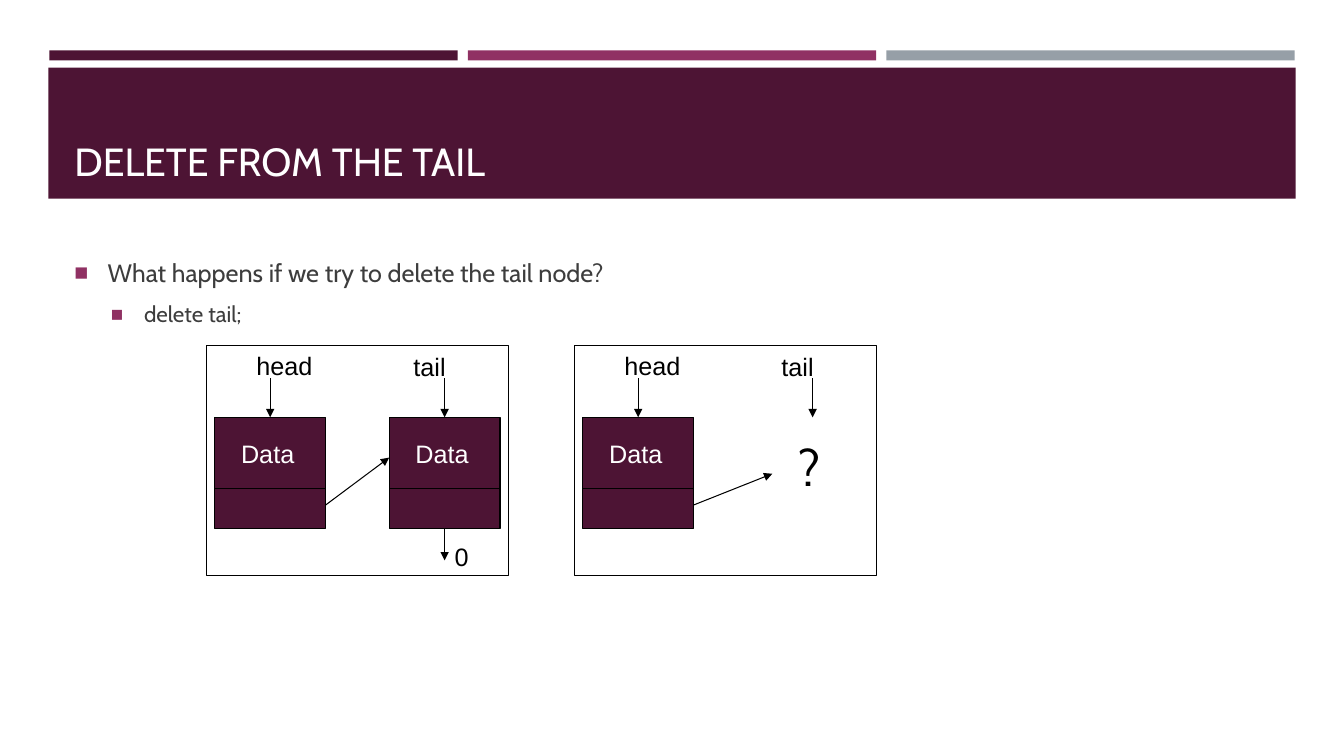
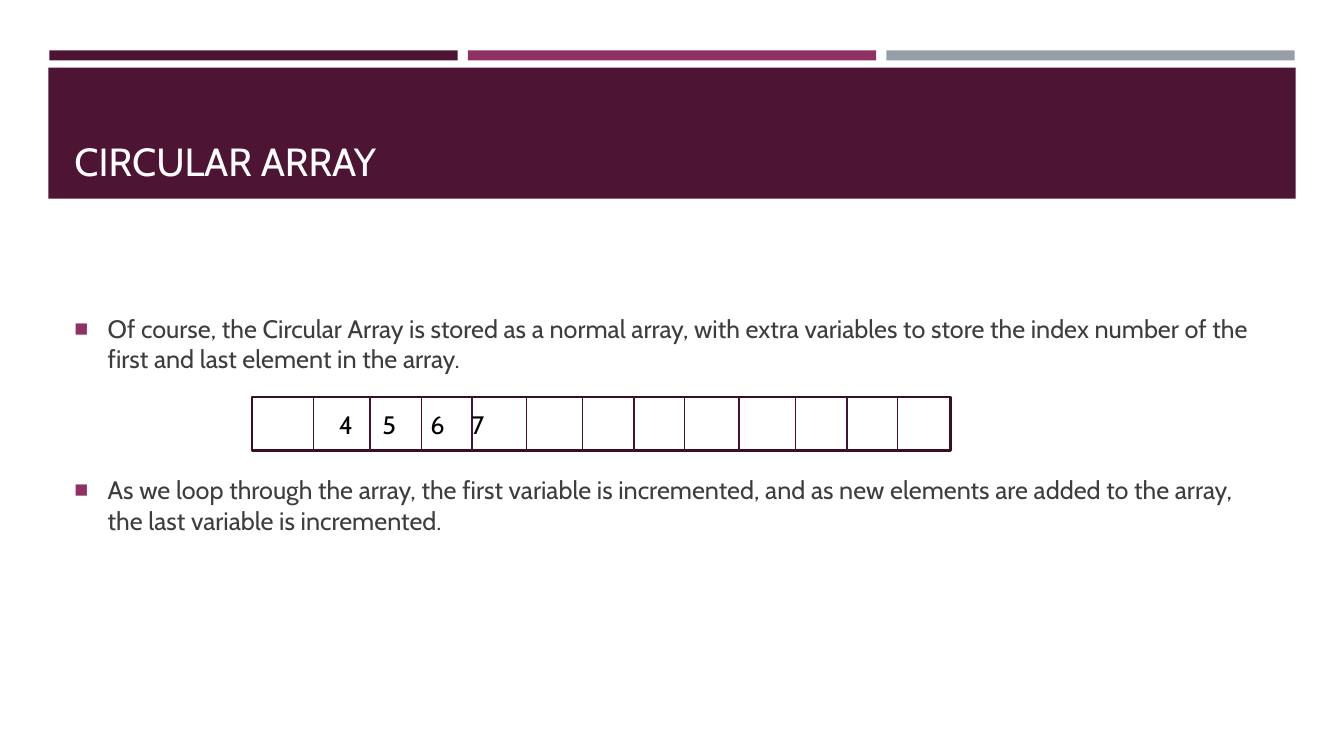
from dataclasses import dataclass
from itertools import product
from typing import Optional

from lxml.etree import SubElement
from pptx import Presentation
from pptx.dml.color import RGBColor
from pptx.enum.shapes import MSO_CONNECTOR, MSO_SHAPE
from pptx.enum.text import MSO_ANCHOR, PP_ALIGN
from pptx.oxml.ns import qn
from pptx.shapes.autoshape import Shape
from pptx.shapes.connector import Connector
from pptx.slide import Slide
from pptx.text.text import _Paragraph as Paragraph
from pptx.util import Inches, Pt


@dataclass(frozen=True)
class Theme:
    plum: str = "4D1434"
    magenta: str = "903163"
    gray: str = "969FA7"
    white: str = "FFFFFF"
    black: str = "000000"
    body: str = "3D3D3D"
    array_edge: str = "390F26"
    array_divider: str = "45122F"
    main_font: str = "Cabin"
    label_font: str = "Arial"
    title_size: float = 28
    text_size: float = 18
    detail_size: float = 16
    question_size: float = 36
    thin: float = 0.75


THEME = Theme()


@dataclass(frozen=True)
class Area:
    left: float
    top: float
    width: float
    height: float


@dataclass(frozen=True)
class Bullet:
    text: str
    level: int = 0
    gap_after: float = 9.6


@dataclass(frozen=True)
class Label:
    text: str
    area: Area
    color: str = THEME.black
    font: str = THEME.label_font
    size: float = THEME.text_size


@dataclass(frozen=True)
class Outline:
    color: str
    width: float


BLACK_LINE = Outline(THEME.black, THEME.thin)
NODE_SIZE = 1.1
NODE_TOP = 4.14


def add_box(page: Slide, area: Area, fill: Optional[str] = None,
            outline: Optional[Outline] = None) -> Shape:
    box = page.shapes.add_shape(
        MSO_SHAPE.RECTANGLE, Inches(area.left), Inches(area.top),
        Inches(area.width), Inches(area.height))
    box.shadow.inherit = False
    if fill:
        box.fill.solid()
        box.fill.fore_color.rgb = RGBColor.from_string(fill)
    else:
        box.fill.background()
    if outline:
        box.line.color.rgb = RGBColor.from_string(outline.color)
        box.line.width = Pt(outline.width)
    else:
        box.line.fill.background()
    return box


def add_line(page: Slide, start: tuple[float, float], end: tuple[float, float],
             outline: Outline = BLACK_LINE, arrow: bool = False) -> Connector:
    line = page.shapes.add_connector(
        MSO_CONNECTOR.STRAIGHT, Inches(start[0]), Inches(start[1]),
        Inches(end[0]), Inches(end[1]))
    line.line.color.rgb = RGBColor.from_string(outline.color)
    line.line.width = Pt(outline.width)
    properties = line.element.spPr
    if arrow:
        SubElement(properties.find(qn("a:ln")), qn("a:tailEnd"), type="triangle")
    SubElement(properties, qn("a:effectLst"))
    return line


def add_text_box(page: Slide, area: Area, wrap: bool = True,
                 anchor: MSO_ANCHOR = MSO_ANCHOR.TOP) -> Shape:
    box = page.shapes.add_textbox(
        Inches(area.left), Inches(area.top), Inches(area.width), Inches(area.height))
    box.text_frame.word_wrap = wrap
    box.text_frame.vertical_anchor = anchor
    return box


def add_span(para: Paragraph, text: str, size: float, color: str,
             font: str = THEME.main_font) -> None:
    span = para.add_run()
    span.text = text
    span.font.size = Pt(size)
    span.font.name = font
    span.font.color.rgb = RGBColor.from_string(color)


def add_label(page: Slide, label: Label) -> None:
    box = add_text_box(page, label.area, wrap=False)
    para = box.text_frame.paragraphs[0]
    para.alignment = PP_ALIGN.CENTER
    add_span(para, label.text, label.size, label.color, label.font)


def set_bullet(para: Paragraph, level: int) -> None:
    properties = para._p.get_or_add_pPr()
    properties.set("marL", str(Inches(0.33 + 0.36 * level)))
    properties.set("indent", str(Inches(-0.33)))
    color = SubElement(properties, qn("a:buClr"))
    SubElement(color, qn("a:srgbClr"), val=THEME.magenta)
    SubElement(properties, qn("a:buSzPct"), val="92000")
    SubElement(properties, qn("a:buFont"), typeface=THEME.label_font)
    SubElement(properties, qn("a:buChar"), char="■")


def add_bullets(page: Slide, top: float, bullets: list[Bullet]) -> None:
    frame = add_text_box(page, Area(0.64, top, 12.06, 6.4 - top)).text_frame
    for index, bullet in enumerate(bullets):
        para = frame.add_paragraph() if index else frame.paragraphs[0]
        para.level = bullet.level
        para.space_before = Pt(0)
        para.space_after = Pt(bullet.gap_after)
        set_bullet(para, bullet.level)
        size = THEME.detail_size if bullet.level else THEME.text_size
        add_span(para, bullet.text, size, THEME.body)


def add_page(deck: Presentation, title: str) -> Slide:
    page = deck.slides.add_slide(deck.slide_layouts[6])
    for index, color in enumerate((THEME.plum, THEME.magenta, THEME.gray)):
        add_box(page, Area(0.49 + 4.15 * index, 0.5, 4.05, 0.1), color)
    add_box(page, Area(0.48, 0.67, 12.37, 1.3), THEME.plum)
    box = add_text_box(page, Area(0.64, 0.77, 12.06, 1.11), anchor=MSO_ANCHOR.BOTTOM)
    add_span(box.text_frame.paragraphs[0], title, THEME.title_size, THEME.white)
    return page


def add_node(page: Slide, left: float) -> Shape:
    node = add_box(page, Area(left, NODE_TOP, NODE_SIZE, NODE_SIZE), THEME.plum, BLACK_LINE)
    add_line(page, (left, 4.85), (left + NODE_SIZE, 4.85))
    add_label(page, Label("Data", Area(left + 0.16, 4.3, 0.73, 0.4), THEME.white))
    return node


def add_list_panel(page: Slide, left: float, has_tail_node: bool) -> None:
    add_box(page, Area(left, 3.43, 2.99, 2.28), outline=BLACK_LINE)
    add_label(page, Label("head", Area(left + 0.39, 3.43, 0.76, 0.4)))
    add_label(page, Label("tail", Area(left + 1.95, 3.44, 0.52, 0.4)))
    head_center, tail_center = left + 0.63, left + 2.36
    head_node = add_node(page, left + 0.08)
    head_arrow = add_line(page, (head_center, 3.75), (head_center, NODE_TOP), arrow=True)
    head_arrow.end_connect(head_node, 0)
    tail_arrow = add_line(page, (tail_center, 3.75), (tail_center, NODE_TOP), arrow=True)
    next_start = (left + 1.18, 5.01)
    if has_tail_node:
        tail_node = add_node(page, left + 1.81)
        tail_arrow.end_connect(tail_node, 0)
        add_line(page, next_start, (left + 1.81, 4.54), arrow=True)
        null_arrow = add_line(page, (tail_center, 5.24), (tail_center, 5.56), arrow=True)
        null_arrow.begin_connect(tail_node, 2)
        add_label(page, Label("0", Area(left + 2.36, 5.32, 0.34, 0.4)))
    else:
        add_line(page, next_start, (left + 1.96, 4.7), arrow=True)
        add_label(page, Label("?", Area(left + 2.12, 4.28, 0.37, 0.71),
                              font=THEME.main_font, size=THEME.question_size))


def add_array(page: Slide) -> None:
    top, height = 3.94, 0.53
    add_box(page, Area(2.5, top, 6.93, height), THEME.white,
            Outline(THEME.array_edge, 1.75))
    divider = Outline(THEME.array_divider, 1)
    for group, offset in product(range(3), (0, 0.56, 1.07, 1.57)):
        x = 3.11 + 2.11 * group + offset
        add_line(page, (x, top), (x, top + height), divider)
    for digit, center in zip("4567", (3.43, 3.86, 4.34, 4.74)):
        add_label(page, Label(digit, Area(center - 0.17, 4.01, 0.34, 0.4),
                              font=THEME.main_font))


def add_delete_page(deck: Presentation) -> None:
    page = add_page(deck, "DELETE FROM THE TAIL")
    add_bullets(page, 2.5, [
        Bullet("What happens if we try to delete the tail node?"),
        Bullet("delete tail;", level=1),
    ])
    add_list_panel(page, 2.05, has_tail_node=True)
    add_list_panel(page, 5.7, has_tail_node=False)


def add_array_page(deck: Presentation) -> None:
    page = add_page(deck, "CIRCULAR ARRAY")
    add_bullets(page, 3.06, [
        Bullet("Of course, the Circular Array is stored as a normal array, with extra "
               "variables to store the index number of the first and last element in "
               "the array.", gap_after=72),
        Bullet("As we loop through the array, the first variable is incremented, and as "
               "new elements are added to the array, the last variable is incremented."),
    ])
    add_array(page)


def main() -> None:
    deck = Presentation()
    deck.slide_width = Inches(13.33)
    deck.slide_height = Inches(7.5)
    add_delete_page(deck)
    add_array_page(deck)
    deck.save("out.pptx")


if __name__ == "__main__":
    main()
